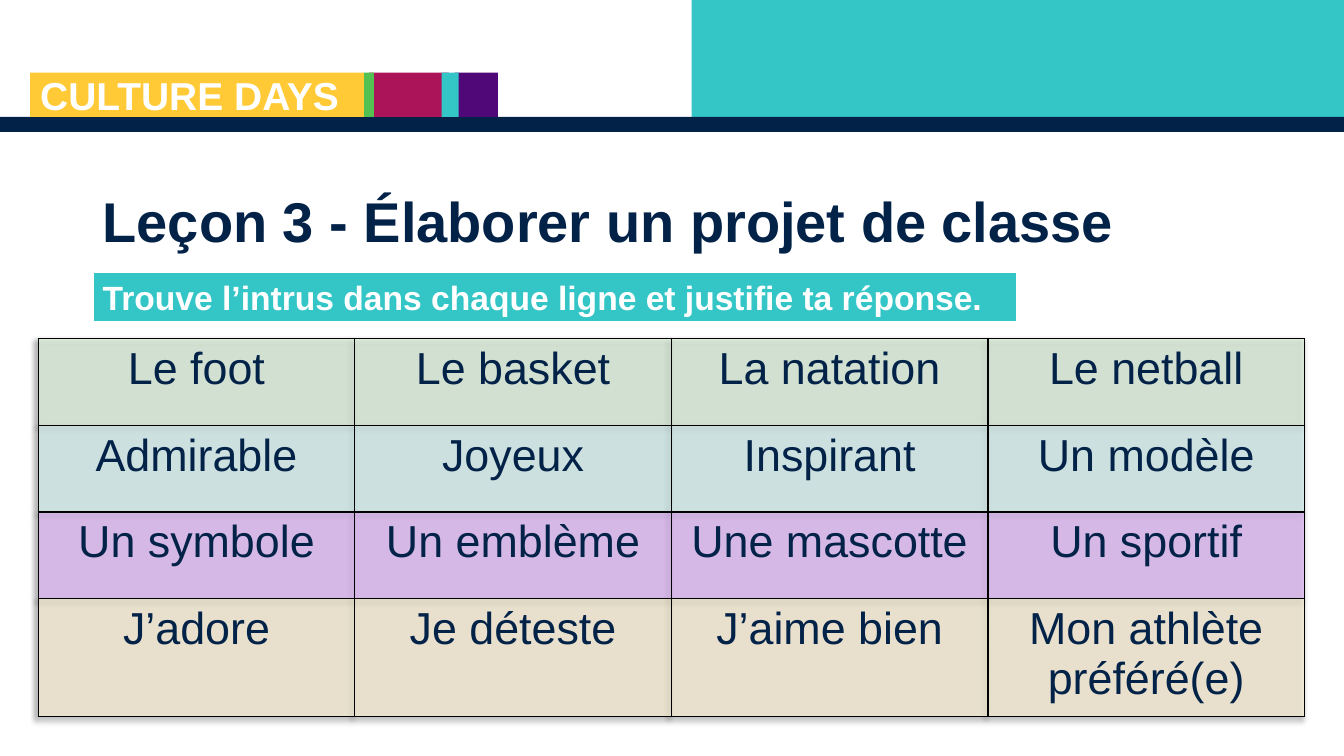
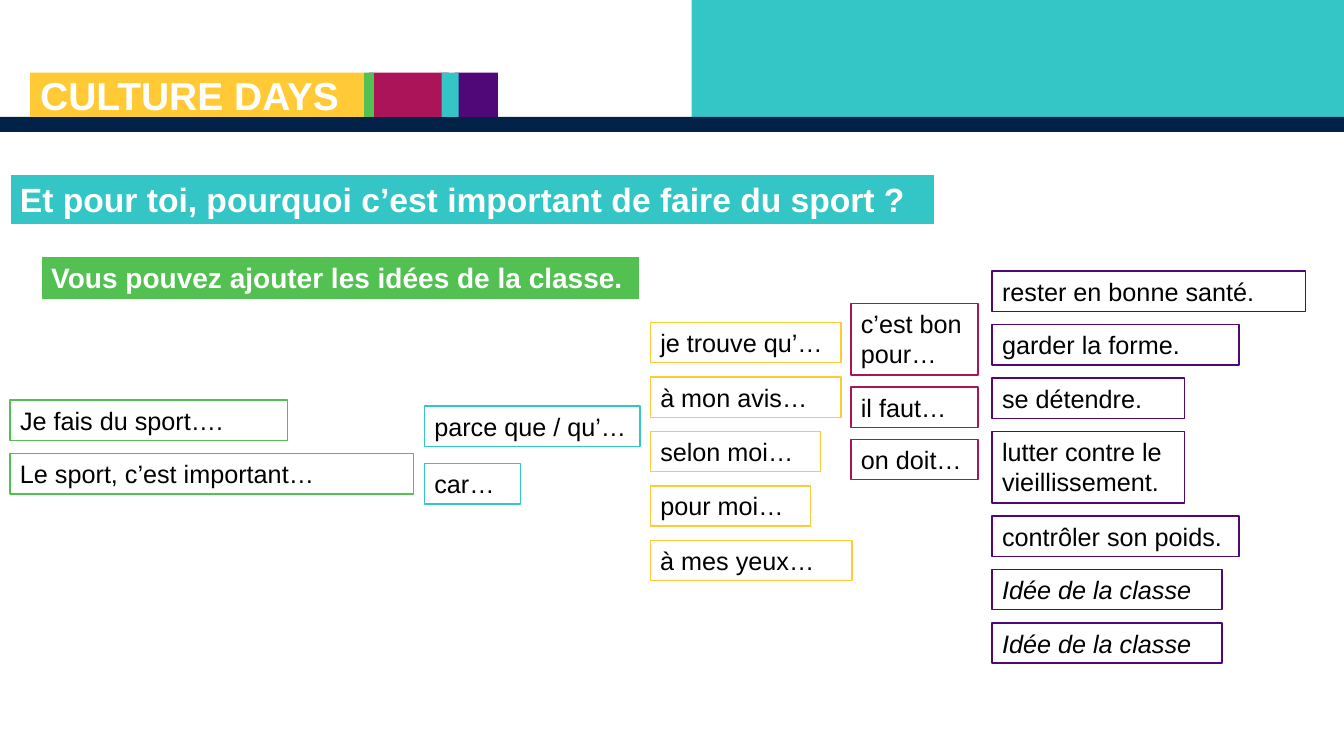
import pptx
import pptx.util
import pptx.dml.color
import pptx.enum.shapes
import pptx.enum.text
import pptx.oxml
import pptx.oxml.ns
from lxml import etree

Inches = pptx.util.Inches
Pt = pptx.util.Pt
RGBColor = pptx.dml.color.RGBColor
qn = pptx.oxml.ns.qn

TEAL = RGBColor(0x34, 0xC6, 0xC6)
NAVY = RGBColor(0x03, 0x22, 0x48)
PURPLE = RGBColor(0x50, 0x07, 0x78)
CRIMSON = RGBColor(0xAC, 0x14, 0x5A)
GREEN = RGBColor(0x52, 0xC1, 0x52)
YELLOW = RGBColor(0xFF, 0xCA, 0x36)
WHITE = RGBColor(0xFF, 0xFF, 0xFF)
BLACK = RGBColor(0x00, 0x00, 0x00)
PALE_GREEN = RGBColor(0xDC, 0xF3, 0xDC)
PALE_TEAL = RGBColor(0xD6, 0xF4, 0xF4)
PALE_PURPLE = RGBColor(0xE3, 0xB7, 0xFB)
PALE_YELLOW = RGBColor(0xFF, 0xF4, 0xD7)

FONT = "Arial"
DRAWING_NS = 'xmlns:a="http://schemas.openxmlformats.org/drawingml/2006/main"'

# Header: left, top, width, height, colour
HEADER_BLOCKS = [
    (6.86, 0, 6.48, 1.16, TEAL),
    (0, 1.16, 13.33, 0.15, NAVY),
    (4.51, 0.72, 0.43, 0.44, PURPLE),
    (3.66, 0.72, 0.79, 0.44, CRIMSON),
    (4.38, 0.72, 0.17, 0.44, TEAL),
    (3.61, 0.72, 0.1, 0.44, GREEN),
    (0.3, 0.72, 3.31, 0.44, YELLOW),
]


def add_block(slide, left, top, width, height, fill, line=None, line_width=1):
    block = slide.shapes.add_shape(
        pptx.enum.shapes.MSO_SHAPE.RECTANGLE,
        Inches(left), Inches(top), Inches(width), Inches(height))
    block.shadow.inherit = False
    block.fill.solid()
    block.fill.fore_color.rgb = fill
    if line is None:
        block.line.fill.background()
    else:
        block.line.color.rgb = line
        block.line.width = Pt(line_width)
    return block


def write(frame, text, size, color, bold=False, italic=False, spacing=1.0,
          align=pptx.enum.text.PP_ALIGN.LEFT,
          anchor=pptx.enum.text.MSO_ANCHOR.TOP):
    frame.word_wrap = True
    frame.vertical_anchor = anchor
    paragraph = frame.paragraphs[0]
    paragraph.alignment = align
    paragraph.line_spacing = spacing
    run = paragraph.add_run()
    run.text = text
    run.font.name = FONT
    run.font.size = Pt(size)
    run.font.bold = bold
    run.font.italic = italic
    run.font.color.rgb = color


deck = pptx.Presentation()
deck.slide_width = Inches(13.33)
deck.slide_height = Inches(7.5)

# Both slides with their shared header
lesson, opinions = [deck.slides.add_slide(deck.slide_layouts[6]) for _ in range(2)]
for slide in (lesson, opinions):
    for header_block in HEADER_BLOCKS:
        add_block(slide, *header_block)
    section = slide.shapes.add_textbox(Inches(0.3), Inches(0.75), Inches(4.15), Inches(0.48))
    write(section.text_frame, "CULTURE DAYS", 27.8, WHITE, bold=True, spacing=0.8)

# Lesson title
title = lesson.shapes.add_textbox(Inches(0.92), Inches(1.5), Inches(11.5), Inches(1.45))
write(title.text_frame, "Leçon 3 - Élaborer un projet de classe", 40, NAVY, bold=True,
      spacing=0.9, anchor=pptx.enum.text.MSO_ANCHOR.MIDDLE)

# Instruction bands
bands = [
    (lesson, 0.92, 2.7, 9.17, 0.5, TEAL, 24,
     "Trouve l’intrus dans chaque ligne et justifie ta réponse."),
    (opinions, 0.1, 1.73, 9.17, 0.5, TEAL, 24,
     "Et pour toi, pourquoi c’est important de faire du sport ?"),
    (opinions, 0.41, 2.54, 5.94, 0.44, GREEN, 20,
     "Vous pouvez ajouter les idées de la classe."),
]
for slide, left, top, width, height, color, size, text in bands:
    band = add_block(slide, left, top, width, height, color, WHITE, 1.5)
    write(band.text_frame, text, size, WHITE, bold=True)

# Odd-one-out table
word_rows = [
    (PALE_GREEN, 0.86, ["Le foot", "Le basket", "La natation", "Le netball"]),
    (PALE_TEAL, 0.86, ["Admirable", "Joyeux", "Inspirant", "Un modèle"]),
    (PALE_PURPLE, 0.86, ["Un symbole", "Un emblème", "Une mascotte", "Un sportif"]),
    (PALE_YELLOW, 1.16, ["J’adore", "Je déteste", "J’aime bien", "Mon athlète préféré(e)"]),
]
words = lesson.shapes.add_table(
    4, 4, Inches(0.38), Inches(3.36), Inches(12.57), Inches(3.74)).table
words.first_row = False
words.horz_banding = False
for column in words.columns:
    column.width = Inches(3.14)

# Soft shadow under the table
words._tbl.tblPr.insert(0, etree.fromstring(
    f'<a:effectLst {DRAWING_NS}>'
    '<a:outerShdw blurRad="50800" dist="38100" dir="8100000" algn="tr" rotWithShape="0">'
    '<a:srgbClr val="000000"><a:alpha val="40000"/></a:srgbClr>'
    '</a:outerShdw></a:effectLst>'))

for r, (color, height, row_words) in enumerate(word_rows):
    words.rows[r].height = Inches(height)
    for c, word in enumerate(row_words):
        cell = words.cell(r, c)
        write(cell.text_frame, word, 32, NAVY, align=pptx.enum.text.PP_ALIGN.CENTER)
        cell_properties = cell._tc.get_or_add_tcPr()
        for side in ("lnL", "lnR", "lnT", "lnB"):
            cell_properties.append(etree.fromstring(
                f'<a:{side} {DRAWING_NS} w="12700"><a:solidFill>'
                f'<a:srgbClr val="{BLACK}"/></a:solidFill></a:{side}>'))
        cell.fill.solid()
        cell.fill.fore_color.rgb = color
        tint = cell_properties.find(qn("a:solidFill")).find(qn("a:srgbClr"))
        etree.SubElement(tint, qn("a:alpha")).set("val", "66000")

# Sentence builder: left, top, gap, colour, then (text, width, lines)
phrase_columns = [
    (0.1, 3.97, 0.13, GREEN, [
        ("Je fais du sport….", 2.75, 1),
        ("Le sport, c’est important…", 4, 1)]),
    (4.21, 4.03, 0.17, TEAL, [
        ("parce que / qu’…", 2.14, 1),
        ("car…", 0.95, 1)]),
    (6.45, 3.2, 0.14, YELLOW, [
        ("je trouve qu’…", 1.89, 1),
        ("à mon avis…", 1.89, 1),
        ("selon moi…", 1.69, 1),
        ("pour moi…", 1.59, 1),
        ("à mes yeux…", 2, 1)]),
    (8.44, 3.01, 0.12, CRIMSON, [
        ("c’est bon pour…", 1.26, 2),
        ("il faut…", 1.26, 1),
        ("on doit…", 1.26, 1)]),
    (9.84, 2.69, 0.13, PURPLE, [
        ("rester en bonne santé.", 3.11, 1),
        ("garder la forme.", 2.45, 1),
        ("se détendre.", 1.91, 1),
        ("lutter contre le vieillissement.", 1.91, 2),
        ("contrôler son poids.", 2.45, 1),
        ("Idée de la classe", 2.28, 1),
        ("Idée de la classe", 2.28, 1)]),
]
for left, top, gap, color, phrases in phrase_columns:
    for text, width, lines in phrases:
        height = 0.4 if lines == 1 else 0.71
        phrase = add_block(opinions, left, top, width, height, WHITE, color)
        write(phrase.text_frame, text, 18, BLACK, italic=text.startswith("Idée"))
        top += height + gap

deck.save("out.pptx")
